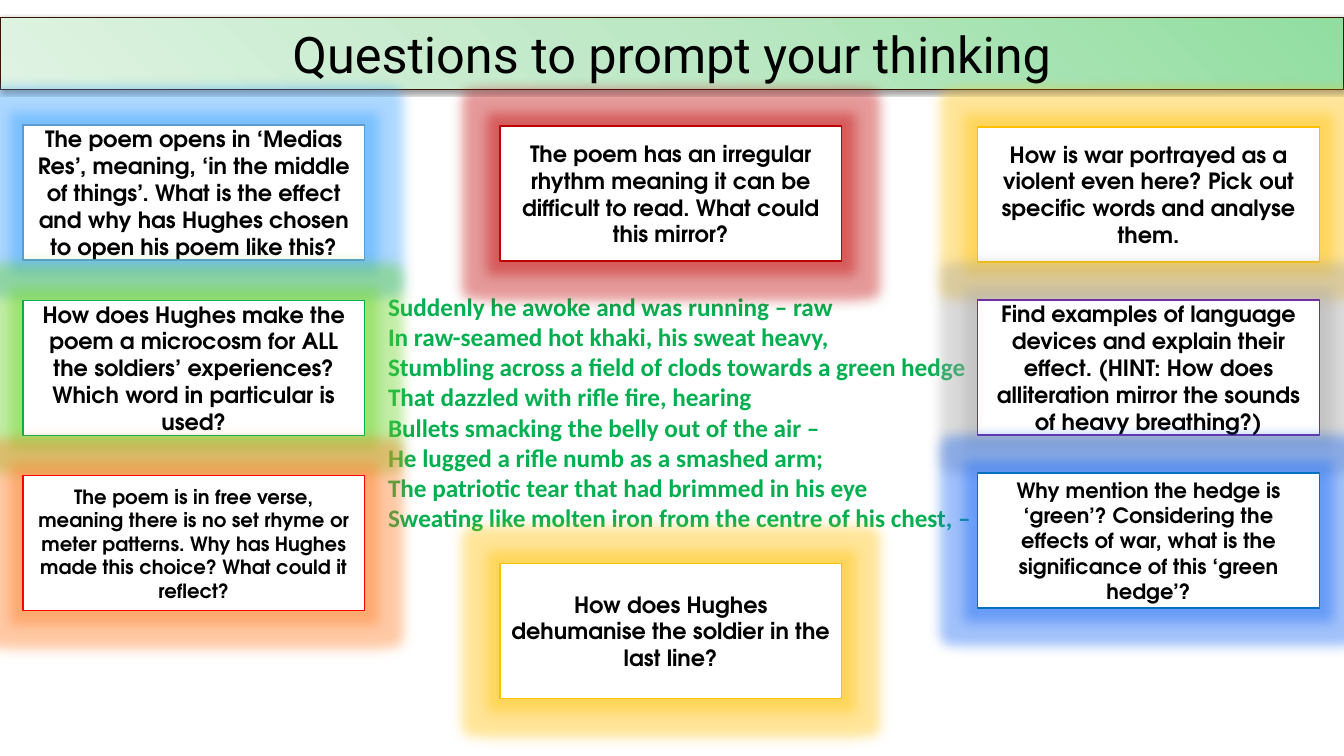
from dataclasses import dataclass

from lxml.etree import SubElement
from pptx import Presentation
from pptx.dml.color import RGBColor
from pptx.enum.shapes import MSO_SHAPE
from pptx.enum.text import MSO_ANCHOR, MSO_AUTO_SIZE, PP_ALIGN
from pptx.oxml import parse_xml
from pptx.oxml.ns import nsdecls, qn
from pptx.util import Cm, Pt


@dataclass(frozen=True)
class Theme:
    title_font: str = "Roboto"
    poem_font: str = "Calibri"
    question_font: str = "TeX Gyre Adventor"
    title_size: float = 36
    poem_size: float = 18
    text: str = "000000"
    paper: str = "FFFFFF"
    poem: str = "00B050"
    title_line: str = "3C1301"
    title_gradient: tuple = ((0, "91DEA0"), (50, "BDE8C5"), (100, "DFF3E3"))


@dataclass(frozen=True)
class Question:
    text: str
    line: str
    glow: str
    size: float = 16


THEME = Theme()
CARD_WIDTH, CARD_HEIGHT = 8.61, 3.4

# Each column: left edge, top of its first card, distance between cards, questions
COLUMNS = (
    (0.58, 3.15, 4.42, (
        Question("The poem opens in ‘Medias Res’, meaning, ‘in the middle of things’. "
                 "What is the effect and why has Hughes chosen to open his poem like this?",
                 "5B9BD5", "5B9BD5"),
        Question("How does Hughes make the poem a microcosm for ALL the soldiers’ "
                 "experiences? Which word in particular is used?", "00B050", "70AD47"),
        Question("The poem is in free verse, meaning there is no set rhyme or meter patterns. "
                 "Why has Hughes made this choice? What could it reflect?",
                 "FF0000", "ED7D31", 14),
    )),
    (24.64, 3.2, 4.36, (
        Question("How is war portrayed as a violent even here? Pick out specific words "
                 "and analyse them.", "FFC000", "FFC000"),
        Question("Find examples of language devices and explain their effect. (HINT: How does "
                 "alliteration mirror the sounds of heavy breathing?)", "7030A0", "A5A5A5"),
        Question("Why mention the hedge is ‘green’? Considering the effects of war, what is "
                 "the significance of this ‘green hedge’?", "0070C0", "4472C4", 15),
    )),
    (12.6, 3.18, 11.02, (
        Question("The poem has an irregular rhythm meaning it can be difficult to read. "
                 "What could this mirror?", "C00000", "C00000"),
        Question("How does Hughes dehumanise the soldier in the last line?",
                 "FFC000", "FFC000"),
    )),
)

POEM = (
    "Suddenly he awoke and was running – raw",
    "In raw-seamed hot khaki, his sweat heavy,",
    "Stumbling across a field of clods towards a green hedge",
    "That dazzled with rifle fire, hearing",
    "Bullets smacking the belly out of the air –",
    "He lugged a rifle numb as a smashed arm;",
    "The patriotic tear that had brimmed in his eye",
    "Sweating like molten iron from the centre of his chest, –",
)


def add_span(para, text, font, size, color, bold=False):
    span = para.add_run()
    span.text = text
    span.font.name, span.font.size, span.font.bold = font, Pt(size), bold
    span.font.color.rgb = RGBColor.from_string(color)


def set_line(shape, color, width):
    shape.line.color.rgb = RGBColor.from_string(color)
    shape.line.width = Pt(width)


def add_effect(shape, kind, color, modifiers, **settings):
    """Give the shape a single effect, such as a glow or an outer shadow."""
    shape.shadow.inherit = False
    effects = shape._element.spPr.find(qn("a:effectLst"))
    effect = SubElement(effects, qn(f"a:{kind}"), settings)
    tint = SubElement(effect, qn("a:srgbClr"), val=color)
    for name, percent in modifiers:
        SubElement(tint, qn(f"a:{name}"), val=str(percent * 1000))


def add_title(page, left, top, width, height):
    title = page.shapes.title
    title.left, title.top, title.width, title.height = map(Cm, (left, top, width, height))
    stops = "".join(
        f'<a:gs pos="{position * 1000}"><a:srgbClr val="{color}"/></a:gs>'
        for position, color in THEME.title_gradient)
    title._element.spPr.insert(1, parse_xml(
        f'<a:gradFill {nsdecls("a")} rotWithShape="1"><a:gsLst>{stops}</a:gsLst>'
        '<a:path path="circle"><a:fillToRect l="100000" b="100000"/></a:path></a:gradFill>'))
    set_line(title, THEME.title_line, 0.75)
    add_effect(title, "outerShdw", THEME.text, [("alpha", 38)],
               blurRad=str(Pt(3.1)), dist=str(Pt(1.6)), dir="5400000", rotWithShape="0")
    frame = title.text_frame
    frame.auto_size = MSO_AUTO_SIZE.NONE
    frame.vertical_anchor = MSO_ANCHOR.MIDDLE
    para = frame.paragraphs[0]
    para.alignment = PP_ALIGN.CENTER
    add_span(para, "Questions to prompt your thinking",
             THEME.title_font, THEME.title_size, THEME.text)


def add_poem(page, left, top, width, height):
    frame = page.shapes.add_textbox(*map(Cm, (left, top, width, height))).text_frame
    frame.word_wrap = True
    frame.auto_size = MSO_AUTO_SIZE.SHAPE_TO_FIT_TEXT
    for index, verse in enumerate(POEM):
        para = frame.add_paragraph() if index else frame.paragraphs[0]
        add_span(para, verse, THEME.poem_font, THEME.poem_size, THEME.poem, bold=True)


def add_question(page, question, left, top):
    box = page.shapes.add_shape(
        MSO_SHAPE.RECTANGLE, *map(Cm, (left, top, CARD_WIDTH, CARD_HEIGHT)))
    box.fill.solid()
    box.fill.fore_color.rgb = RGBColor.from_string(THEME.paper)
    set_line(box, question.line, 1)
    add_effect(box, "glow", question.glow, [("satMod", 175), ("alpha", 40)], rad=str(Pt(18)))
    frame = box.text_frame
    frame.word_wrap = True
    frame.vertical_anchor = MSO_ANCHOR.MIDDLE
    para = frame.paragraphs[0]
    para.alignment = PP_ALIGN.CENTER
    add_span(para, question.text, THEME.question_font, question.size, THEME.text, bold=True)


def add_question_column(page, left, top, pitch, questions):
    for row, question in enumerate(questions):
        add_question(page, question, left, top + row * pitch)


def main():
    deck = Presentation()
    deck.slide_width, deck.slide_height = Cm(33.87), Cm(19.05)
    page = deck.slides.add_slide(deck.slide_layouts[5])
    add_title(page, 0, 0.43, 33.87, 1.83)
    add_poem(page, 9.53, 7.21, 16.94, 6.4)
    for column in COLUMNS:
        add_question_column(page, *column)
    deck.save("out.pptx")


if __name__ == "__main__":
    main()
